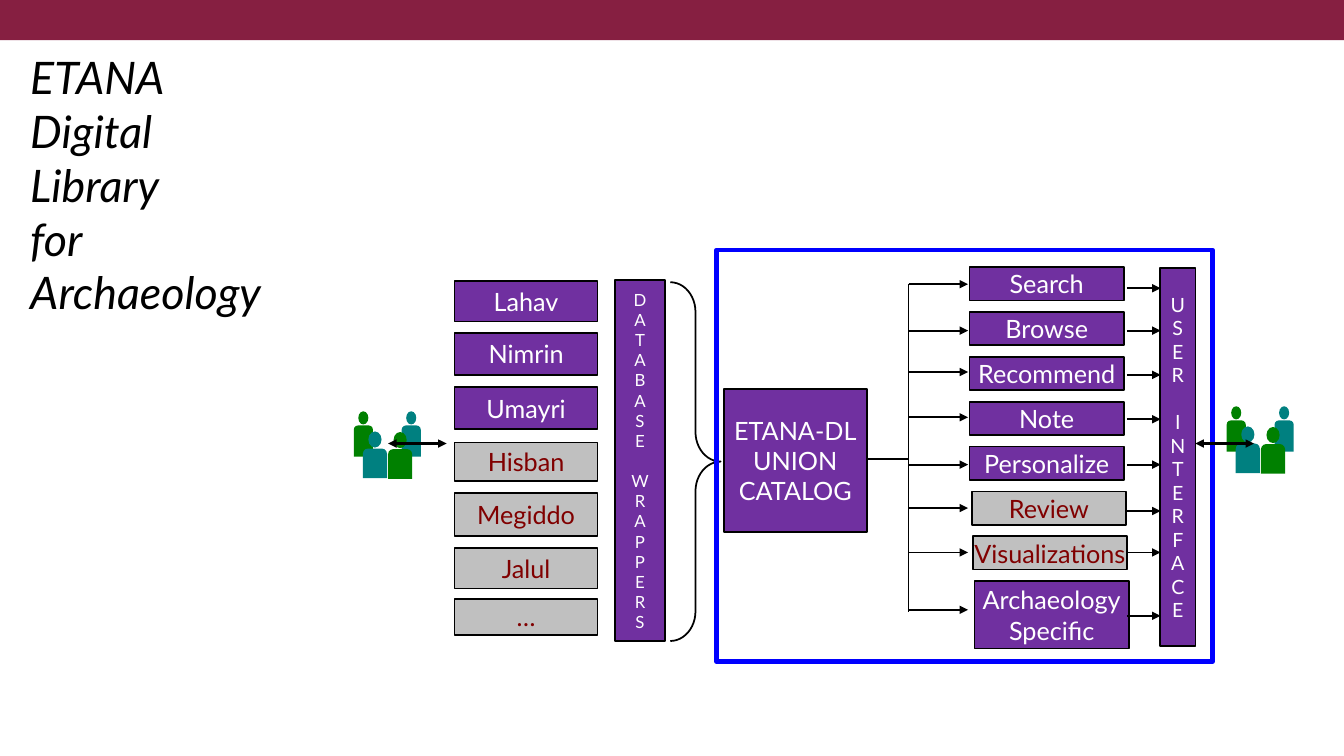
from lxml.etree import SubElement
from pptx import Presentation
from pptx.dml.color import RGBColor
from pptx.enum.shapes import MSO_CONNECTOR, MSO_SHAPE
from pptx.enum.text import MSO_ANCHOR, MSO_AUTO_SIZE, PP_ALIGN
from pptx.oxml.ns import qn
from pptx.util import Pt

FONT = "Lato"
COLORS = {
    "banner": "861F41", "purple": "7030A0", "gray": "C0C0C0", "maroon": "800000",
    "black": "000000", "white": "FFFFFF", "frame": "0000FF",
    "green": "008000", "teal": "008080",
}
TITLE_LINES = ["ETANA", "Digital", "Library", "for", "Archaeology"]

# name, top, height, finished
SITES = [
    ("Lahav", 200.9, 28.8, True),
    ("Nimrin", 237.6, 30.2, True),
    ("Umayri", 276.5, 30.2, True),
    ("Hisban", 316.1, 27.4, False),
    ("Megiddo", 352.1, 31, False),
    ("Jalul", 391.7, 28.8, False),
    ("…", 427.7, 25.9, False),
]
# lines, left, finished, y of the arrow in, y of the arrow out
SERVICES = [
    (["Search"], 692.6, True, 203, 205.9),
    (["Browse"], 692.6, True, 236.2, 236.2),
    (["Recommend"], 692.6, True, 265.7, 267.8),
    (["Note"], 692.6, True, 298.1, 299.5),
    (["Personalize"], 692.6, True, 331.9, 331.9),
    (["Review"], 694.1, False, 362.9, 365),
    (["Visualizations"], 694.8, False, 394.6, 394.6),
    (["Archaeology", "Specific"], 696.2, True, 435.6, 439.9),
]
SERVICE_TOP, SERVICE_PITCH, SERVICE_WIDTH = 190.8, 32.05, 110.2
SERVICE_HEIGHTS = {1: 23.8, 2: 48.2}
BUS_X = 649

# color, left, top, head size, body size, body drop; relative to the group
PEOPLE = [
    ("green", 0, 0, (7.2, 9.4), (13.7, 22.3), 10.1),
    ("teal", 34.2, 0, (7.2, 9.4), (13.7, 22.3), 10.1),
    ("green", 24.5, 14.8, (9.4, 11.5), (17.3, 21.2), 12.2),
    ("teal", 6.5, 14.4, (9.4, 11.5), (17.3, 21.2), 12.2),
]
# people left, people top, arrow start, arrow end
USER_GROUPS = [(876.2, 290.2, 853.9, 895.7), (252.7, 293.8, 277.2, 319)]
USER_ARROW_Y = 316.8

presentation = Presentation()
presentation.slide_width, presentation.slide_height = Pt(960), Pt(540)
slide = presentation.slides.add_slide(presentation.slide_layouts[5])


def rgb(name):
    return RGBColor.from_string(COLORS[name])


def add_plain(kind, left, top, width, height, fill=None, line=None, weight=1.25):
    shape = slide.shapes.add_shape(kind, Pt(left), Pt(top), Pt(width), Pt(height))
    shape.shadow.inherit = False
    if fill:
        shape.fill.solid()
        shape.fill.fore_color.rgb = rgb(fill)
    else:
        shape.fill.background()
    if line:
        shape.line.color.rgb = rgb(line)
        shape.line.width = Pt(weight)
    else:
        shape.line.fill.background()
    return shape


def add_run(paragraph, text, size, color):
    run = paragraph.add_run()
    run.text = text
    run.font.name, run.font.size = FONT, Pt(size)
    run.font.color.rgb = rgb(color)
    return run


def add_box(lines, left, top, width, height, finished=True, size=18, gap_before=None):
    """Add a bordered label; gap_before is the line that gets an empty line's space above."""
    fill, color = ("purple", "white") if finished else ("gray", "maroon")
    shape = add_plain(MSO_SHAPE.RECTANGLE, left, top, width, height, fill, "black")
    frame = shape.text_frame
    frame.word_wrap = False
    frame.vertical_anchor = MSO_ANCHOR.MIDDLE
    for index, text in enumerate(lines):
        paragraph = frame.add_paragraph() if index else frame.paragraphs[0]
        paragraph.alignment = PP_ALIGN.CENTER
        if index == gap_before:
            paragraph.space_before = Pt(size * 1.2)
        add_run(paragraph, text, size, color)


def add_line(x1, y1, x2, y2, weight=1.25, arrows=()):
    """Add a black line; arrows lists the ends (headEnd, tailEnd) that get a triangle."""
    line = slide.shapes.add_connector(
        MSO_CONNECTOR.STRAIGHT, Pt(x1), Pt(y1), Pt(x2), Pt(y2))
    line.line.color.rgb = rgb("black")
    line.line.width = Pt(weight)
    outline = line.line._get_or_add_ln()
    for end in arrows:
        SubElement(outline, qn(f"a:{end}"), type="triangle")
    SubElement(line._element.spPr, qn("a:effectLst"))


def add_person(left, top, color, head, body, drop):
    torso = add_plain(MSO_SHAPE.ROUND_2_SAME_RECTANGLE, left, top + drop, *body, color)
    torso.adjustments[0] = 0.22
    add_plain(MSO_SHAPE.OVAL, left + (body[0] - head[0]) / 2, top, *head, color)


def add_title():
    title = slide.shapes.title
    title.left, title.top, title.width, title.height = Pt(0), Pt(88.6), Pt(938.9), Pt(86.4)
    frame = title.text_frame
    frame.auto_size = MSO_AUTO_SIZE.NONE
    frame.word_wrap = True
    frame.vertical_anchor = MSO_ANCHOR.MIDDLE
    frame.margin_left = frame.margin_top = frame.margin_bottom = Pt(21.6)
    frame.margin_right = Pt(7.2)
    paragraph = frame.paragraphs[0]
    paragraph.alignment = PP_ALIGN.LEFT
    for index, text in enumerate(TITLE_LINES):
        if index:
            paragraph.add_line_break()
        add_run(paragraph, text, 32, "black").font.italic = True


def add_services():
    for index, (lines, left, finished, y_in, y_out) in enumerate(SERVICES):
        add_box(lines, left, SERVICE_TOP + index * SERVICE_PITCH, SERVICE_WIDTH,
                SERVICE_HEIGHTS[len(lines)], finished)
        add_line(BUS_X, y_in, 691.5, y_in, arrows=["tailEnd"])
        add_line(805, y_out, 829, y_out, arrows=["tailEnd"])
    add_line(BUS_X, SERVICES[0][3], BUS_X, 437)


add_plain(MSO_SHAPE.RECTANGLE, 0, 0, 960, 28.8, "banner")
add_title()

for name, top, height, finished in SITES:
    add_box([name], 324.7, top, 102.2, height, finished)
add_box("DATABASEWRAPPERS", 439.2, 200.2, 36, 257.8, size=12, gap_before=len("DATABASE"))
brace = add_plain(MSO_SHAPE.RIGHT_BRACE, 478.8, 201.6, 36, 256.3, line="black")
brace.adjustments[0], brace.adjustments[1] = 0.59, 0.5

add_box(["ETANA-DL", "UNION", "CATALOG"], 517, 277.9, 102.2, 102.2)
add_line(619.2, 327.6, BUS_X, 327.6)
add_box("USERINTERFACE", 828.7, 191.5, 25.2, 270, size=14, gap_before=len("USER"))
add_services()
add_plain(MSO_SHAPE.RECTANGLE, 511.9, 178.6, 354.2, 293.8, line="frame", weight=3.5)

for group_left, group_top, start, end in USER_GROUPS:
    for color, left, top, head, body, drop in PEOPLE:
        add_person(group_left + left, group_top + top, color, head, body, drop)
    add_line(start, USER_ARROW_Y, end, USER_ARROW_Y, 2, ["headEnd", "tailEnd"])

presentation.save("out.pptx")
